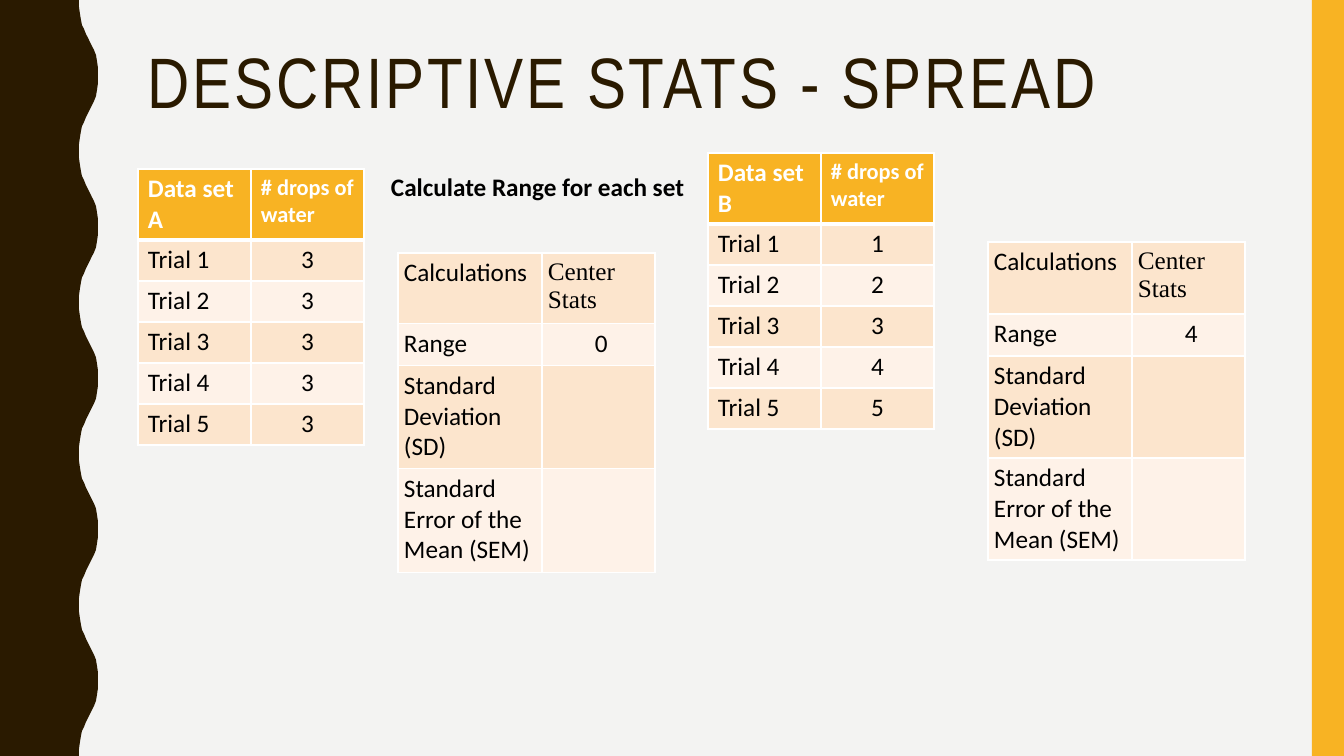
from lxml.etree import SubElement
from pptx import Presentation
from pptx.dml.color import RGBColor
from pptx.enum.shapes import MSO_SHAPE
from pptx.enum.text import MSO_ANCHOR, PP_ALIGN
from pptx.oxml.ns import qn
from pptx.util import Emu, Pt

EMU_PER_PX = 914400 / 100.8
WIDTH, HEIGHT = 1344, 756
WAVE_COUNT = 5
HALF_WAVE = [
    (79, 0), (79, 7), (80, 14), (81, 20), (82, 25), (84, 29), (86, 34), (88, 38),
    (90, 42), (92, 46), (94, 50), (96, 55), (97, 61), (98, 68),
]
CREST = (98, 76)

BACKGROUND = RGBColor(0xF3, 0xF3, 0xF2)
BROWN = RGBColor(0x2A, 0x1A, 0x00)
GOLD = RGBColor(0xF8, 0xB3, 0x23)
PEACH = RGBColor(0xFC, 0xE5, 0xCD)
CREAM = RGBColor(0xFE, 0xF2, 0xE8)
WHITE = RGBColor(0xFF, 0xFF, 0xFF)
BLACK = RGBColor(0x00, 0x00, 0x00)


def px(value):
    """Turn pixels into EMU."""
    return Emu(round(value * EMU_PER_PX))


def paint(shape, color):
    """Give a shape a plain fill without line or shadow."""
    shape.shadow.inherit = False
    shape.fill.solid()
    shape.fill.fore_color.rgb = color
    shape.line.fill.background()


def write(frame, text, size=18, font="Calibri", color=BLACK, bold=False,
          align=PP_ALIGN.LEFT, line_spacing=None, tracking=None):
    """Write formatted text, one paragraph for each line."""
    frame.word_wrap = True
    for index, line in enumerate(text.split("\n")):
        paragraph = frame.add_paragraph() if index else frame.paragraphs[0]
        paragraph.alignment = align
        if line_spacing:
            paragraph.line_spacing = line_spacing
        run = paragraph.add_run()
        run.text = line
        run.font.size = Pt(size)
        run.font.name = font
        run.font.bold = bold
        run.font.color.rgb = color
        if tracking:
            run._r.get_or_add_rPr().set("spc", str(tracking * 100))


def add_text(slide, left, top, width, height, text, **style):
    """Add a text box anchored at the top."""
    box = slide.shapes.add_textbox(px(left), px(top), px(width), px(height))
    box.text_frame.vertical_anchor = MSO_ANCHOR.TOP
    write(box.text_frame, text, **style)


def add_wavy_band(slide):
    """Draw the brown band whose right edge repeats one wave."""
    period = HEIGHT / WAVE_COUNT
    falling = [(x, period - y) for x, y in reversed(HALF_WAVE[1:])]
    wave = HALF_WAVE + [CREST] + falling
    edge = [(x, y + period * index) for index in range(WAVE_COUNT) for x, y in wave]
    outline = edge + [(HALF_WAVE[0][0], HEIGHT), (0, HEIGHT)]
    builder = slide.shapes.build_freeform(0, 0, scale=1.0)
    builder.add_line_segments([(px(x), px(y)) for x, y in outline], close=True)
    paint(builder.convert_to_shape(), BROWN)


def add_side_bar(slide):
    """Draw the gold bar on the right edge."""
    bar = slide.shapes.add_shape(MSO_SHAPE.RECTANGLE, px(1312), 0, px(32), px(HEIGHT))
    paint(bar, GOLD)


def set_borders(cell, top=1, bottom=1):
    """Draw white borders around a cell."""
    properties = cell._tc.get_or_add_tcPr()
    for side, points in (("L", 1), ("R", 1), ("T", top), ("B", bottom)):
        line = SubElement(properties, qn(f"a:ln{side}"), w=str(Pt(points)))
        fill = SubElement(line, qn("a:solidFill"))
        SubElement(fill, qn("a:srgbClr"), val=str(WHITE))


def add_table(slide, left, top, widths, heights, rows, has_header, margin):
    """Add a banded table from rows of (text, style) cells."""
    frame = slide.shapes.add_table(len(rows), len(widths), px(left), px(top),
                                   px(sum(widths)), px(sum(heights)))
    table = frame.table
    table.first_row = has_header
    for column, width in zip(table.columns, widths):
        column.width = px(width)
    for row_index, (row, height) in enumerate(zip(rows, heights)):
        table.rows[row_index].height = px(height)
        is_header = has_header and row_index == 0
        band = (row_index - has_header) % 2
        for column_index, (text, style) in enumerate(row):
            cell = table.cell(row_index, column_index)
            cell.margin_left = cell.margin_right = px(margin)
            cell.margin_top = cell.margin_bottom = px(5)
            set_borders(cell, top=3 if has_header and row_index == 1 else 1,
                        bottom=3 if is_header else 1)
            cell.fill.solid()
            cell.fill.fore_color.rgb = GOLD if is_header else (PEACH, CREAM)[band]
            if text:
                write(cell.text_frame, text, **style)


def add_data_table(slide, left, top, name, drops):
    """Add the table of trials for one data set."""
    heading = {"color": WHITE, "bold": True}
    rows = [[(f"Data set {name}", heading), ("# drops of water", {**heading, "size": 16})]]
    for trial, count in enumerate(drops, 1):
        rows.append([(f"Trial {trial}", {}), (str(count), {"align": PP_ALIGN.CENTER})])
    add_table(slide, left, top, [113, 113], [71] + [41] * len(drops), rows, True, 10)


def add_stats_table(slide, left, top, heights, spread):
    """Add the table of calculations for one data set."""
    rows = [
        [("Calculations", {}), ("Center Stats", {"font": "Times New Roman"})],
        [("Range", {}), (f" {spread}", {"align": PP_ALIGN.CENTER})],
        [("Standard\nDeviation (SD)", {}), ("", {})],
        [("Standard Error of the Mean (SEM)", {}), ("", {})],
    ]
    add_table(slide, left, top, [144, 113], heights, rows, False, 6)


def main():
    """Build the slide and save it."""
    presentation = Presentation()
    presentation.slide_width, presentation.slide_height = px(WIDTH), px(HEIGHT)
    slide = presentation.slides.add_slide(presentation.slide_layouts[6])
    slide.background.fill.solid()
    slide.background.fill.fore_color.rgb = BACKGROUND
    add_wavy_band(slide)
    add_side_bar(slide)
    add_text(slide, 138, 42, 1122, 164, "DESCRIPTIVE STATS - SPREAD", size=51,
             font="Arial Narrow", color=BROWN, line_spacing=0.9, tracking=2)
    add_data_table(slide, 138, 169, "A", [3, 3, 3, 3, 3])
    add_data_table(slide, 708, 153, "B", [1, 2, 3, 4, 5])
    add_stats_table(slide, 398, 253, [67, 42, 103, 104], 0)
    add_text(slide, 381, 166, 358, 40, "Calculate Range for each set", bold=True)
    add_stats_table(slide, 988, 242, [72, 42, 102, 102], 4)
    presentation.save("out.pptx")


if __name__ == "__main__":
    main()
